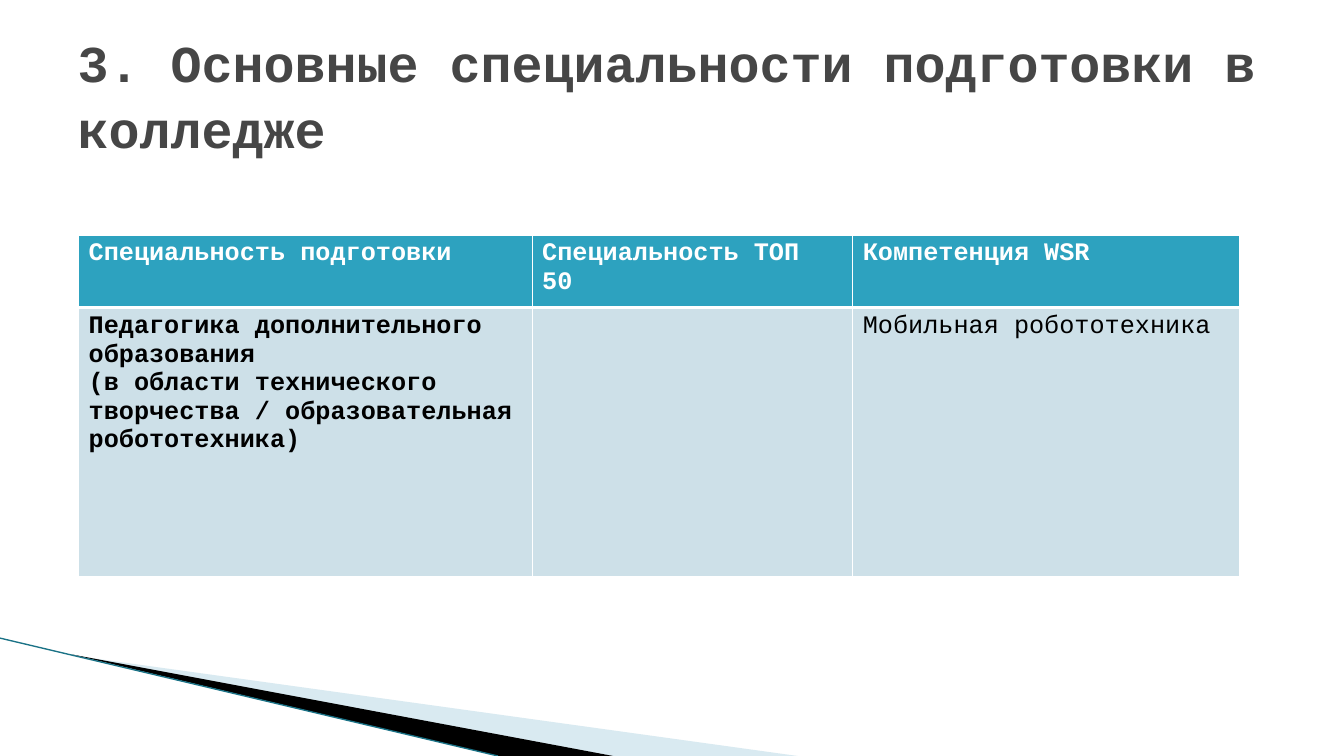
from lxml import etree
from pptx import Presentation
from pptx.dml.color import RGBColor
from pptx.enum.shapes import MSO_CONNECTOR
from pptx.enum.text import MSO_ANCHOR, MSO_AUTO_SIZE, PP_ALIGN
from pptx.oxml.ns import qn
from pptx.util import Cm, Pt

LEFT, MIDDLE = PP_ALIGN.LEFT, MSO_ANCHOR.MIDDLE
NO_FIT = MSO_AUTO_SIZE.NONE
STRAIGHT = MSO_CONNECTOR.STRAIGHT

WHITE = RGBColor(0xFF, 0xFF, 0xFF)
BLACK = RGBColor(0, 0, 0)
GREY = RGBColor(0x46, 0x46, 0x46)
TEAL = RGBColor(0x2D, 0xA2, 0xBF)
DARK_TEAL = RGBColor(0x1A, 0x72, 0x86)
PALE = RGBColor(0xCD, 0xE0, 0xE8)
SKY = RGBColor(0xA0, 0xCB, 0xDC)
FONT = "Courier New"

# Content
TITLE = "3. Основные специальности подготовки в колледже"
ROWS = [
    [["Специальность подготовки"], ["Специальность ТОП 50"], ["Компетенция WSR"]],
    [["Педагогика дополнительного образования",
      "(в области технического творчества / образовательная робототехника)"],
     [], ["Мобильная робототехника"]],
]
COL_WIDTHS = [11.43, 8.08, 9.75]
ROW_HEIGHTS = [1.83, 6.78]
TABLE_LEFT, TABLE_TOP = 1.98, 5.92

# Corner wedges: points in cm, fill, opacity in percent
WEDGES = [
    ([(1.85, 16.52), (20.1, 19.05), (15.44, 19.05)], SKY, 40),
    ([(1.8, 16.49), (15.45, 19.05), (12.55, 19.05)], BLACK, 100),
]
EDGE = [(0, 16.08), (12.55, 19.05)]


def set_font(font, **values):
    for name, value in {"name": FONT, **values}.items():
        if name == "color":
            font.color.rgb = value
        else:
            setattr(font, name, value)


def add_borders(cell, widths):
    tc_pr = cell._tc.get_or_add_tcPr()
    for side, width in zip("LRTB", widths):
        ln = etree.SubElement(tc_pr, qn("a:ln" + side), w=str(Pt(width)))
        fill = etree.SubElement(ln, qn("a:solidFill"))
        etree.SubElement(fill, qn("a:srgbClr"), val=str(WHITE))


prs = Presentation()
prs.slide_width, prs.slide_height = Cm(33.87), Cm(19.05)
s = prs.slides.add_slide(prs.slide_layouts[5])

# Corner decoration
for points, color, opacity in WEDGES:
    corners = [(Cm(x), Cm(y)) for x, y in points]
    builder = s.shapes.build_freeform(*corners[0])
    builder.add_line_segments(corners[1:])
    sp = builder.convert_to_shape()
    sp.shadow.inherit = False
    sp.fill.solid()
    sp.fill.fore_color.rgb = color
    sp.line.fill.background()
    if opacity < 100:
        clr = sp.fill._xPr.find(".//" + qn("a:srgbClr"))
        etree.SubElement(clr, qn("a:alpha"), val=str(opacity * 1000))

(x1, y1), (x2, y2) = EDGE
edge = s.shapes.add_connector(STRAIGHT, Cm(x1), Cm(y1), Cm(x2), Cm(y2))
edge.line.color.rgb = DARK_TEAL
edge.line.width = Pt(0.95)
etree.SubElement(edge._element.spPr, qn("a:effectLst"))

# Title
title = s.shapes.title
title.left, title.top, title.width, title.height = Cm(1.7), Cm(0.76), Cm(30.48), Cm(3.18)
tf = title.text_frame
tf.text = TITLE
tf.word_wrap, tf.auto_size, tf.vertical_anchor = True, NO_FIT, MIDDLE
p = tf.paragraphs[0]
p.alignment, p.line_spacing = LEFT, 1.06
set_font(p.runs[0].font, size=Pt(36.9), bold=True, color=GREY)

# Table
table = s.shapes.add_table(
    len(ROWS), len(COL_WIDTHS), Cm(TABLE_LEFT), Cm(TABLE_TOP),
    Cm(sum(COL_WIDTHS)), Cm(sum(ROW_HEIGHTS))).table
for column, width in zip(table.columns, COL_WIDTHS):
    column.width = Cm(width)
for row, height in zip(table.rows, ROW_HEIGHTS):
    row.height = Cm(height)

for i, row in enumerate(ROWS):
    header = i == 0
    for j, lines in enumerate(row):
        cell = table.cell(i, j)
        add_borders(cell, (1, 1, 1, 3) if header else (1, 1, 3, 1))
        cell.fill.solid()
        cell.fill.fore_color.rgb = TEAL if header else PALE
        cell.text_frame.text = "\n".join(lines)
        for p in cell.text_frame.paragraphs:
            for r in p.runs:
                set_font(r.font, size=Pt(18), bold=header or j == 0,
                         color=WHITE if header else BLACK)

prs.save("out.pptx")
